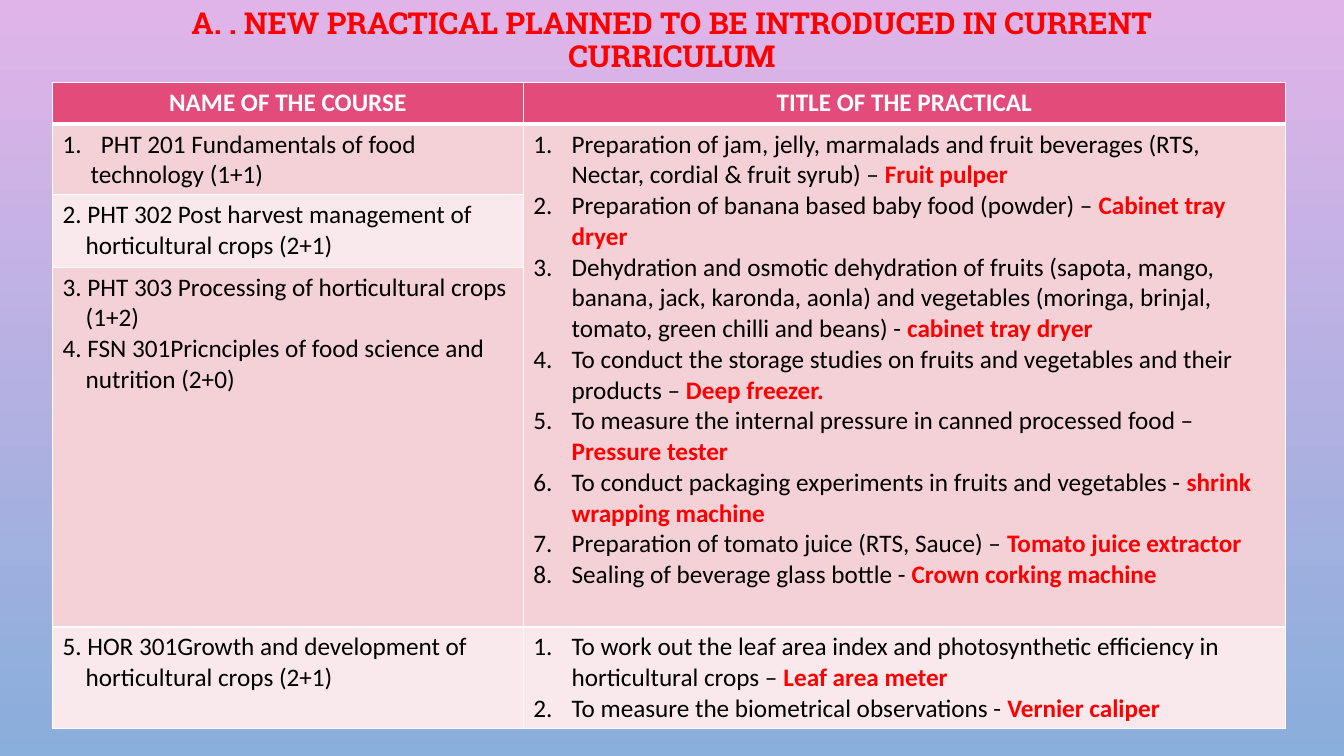
"""Builds the slide of new practicals planned for the curriculum."""
from pptx import Presentation
from pptx.dml.color import RGBColor as RGB
from pptx.enum.text import MSO_ANCHOR as Anchor, PP_ALIGN as Align
from pptx.oxml import parse_xml
from pptx.oxml.ns import nsdecls
from pptx.util import Inches, Pt

HEX = {"ink": "000000", "red": "FF0000", "white": "FFFFFF", "head": "E34B7A",
       "dark": "F4D0D7", "light": "FAE9EC", "top": "E1B4E9", "base": "89AEDB"}
TITLE = "A. . NEW PRACTICAL PLANNED TO BE INTRODUCED IN CURRENT CURRICULUM"
HEADS = ["NAME OF THE COURSE", "TITLE OF THE PRACTICAL"]
NUM, STEP, DEEP = 0.38, 0.23, 0.28
COURSES = [
    [("PHT 201 Fundamentals of food", NUM), ("technology (1+1)", DEEP)],
    [("2. PHT 302 Post harvest management of", 0),
     ("horticultural crops (2+1)", STEP)],
    [("3. PHT 303 Processing of horticultural crops", 0), ("(1+2)", STEP),
     ("4. FSN 301Pricnciples of food science and", 0),
     ("nutrition (2+0)", STEP)],
    [("5. HOR 301Growth and development of", 0),
     ("horticultural crops (2+1)", STEP)],
]
TASKS = {
    1: [("Preparation of jam, jelly, marmalads and fruit beverages "
         "(RTS, Nectar, cordial & fruit syrub) – ", "Fruit pulper"),
        ("Preparation of banana based baby food (powder) – ",
         "Cabinet tray dryer"),
        ("Dehydration and osmotic dehydration of fruits (sapota, mango, "
         "banana, jack, karonda, aonla) and vegetables (moringa, brinjal, "
         "tomato, green chilli and beans) - ", "cabinet tray dryer"),
        ("To conduct the storage studies on fruits and vegetables and their "
         "products – ", "Deep freezer."),
        ("To measure the internal pressure in canned processed food – ",
         "Pressure tester"),
        ("To conduct packaging experiments in fruits and vegetables - ",
         "shrink wrapping machine"),
        ("Preparation of tomato juice (RTS, Sauce) – ",
         "Tomato juice extractor"),
        ("Sealing of beverage glass bottle - ", "Crown corking machine")],
    4: [("To work out the leaf area index and photosynthetic efficiency in "
         "horticultural crops – ", "Leaf area meter"),
        ("To measure the biometrical observations - ", "Vernier caliper")],
}
COLS = [4.67, 7.56]
ROWS = [0.41, 0.7, 0.72, 3.57, 1.01]


def color(name):
    return RGB.from_string(HEX[name])


def add_run(para, text, ink="ink", bold=False, size=18, face="Calibri"):
    run = para.add_run()
    run.text = text
    font = run.font
    font.size, font.name, font.bold = Pt(size), face, bold
    font.color.rgb = color(ink)


def next_para(frame, first):
    return frame.paragraphs[0] if first else frame.add_paragraph()


def indent(para, left, count=False):
    props = para._p.get_or_add_pPr()
    props.set("marL", str(Inches(left)))
    props.set("indent", str(-Inches(left) if count else 0))
    if count:
        props.append(parse_xml(
            f'<a:buAutoNum {nsdecls("a")} type="arabicPeriod"/>'))


def style(cell, fill, foot=1):
    props = cell._tc.get_or_add_tcPr()
    for side, wide in zip("LRTB", (1, 1, 1, foot)):
        props.append(parse_xml(
            f'<a:ln{side} {nsdecls("a")} w="{Pt(wide)}"><a:solidFill>'
            f'<a:srgbClr val="{HEX["white"]}"/></a:solidFill></a:ln{side}>'))
    cell.fill.solid()
    cell.fill.fore_color.rgb = color(fill)


def add_title(slide):
    box = slide.shapes.add_textbox(
        Inches(1), Inches(0.07), Inches(11.33), Inches(0.68))
    frame = box.text_frame
    frame.word_wrap = True
    frame.vertical_anchor = Anchor.MIDDLE
    para = frame.paragraphs[0]
    para.alignment, para.line_spacing = Align.CENTER, 0.9
    add_run(para, TITLE, "red", True, 21.6, "Roboto Slab")


def add_grid(slide):
    grid = slide.shapes.add_table(
        len(ROWS), len(COLS), Inches(0.52), Inches(0.82),
        Inches(sum(COLS)), Inches(sum(ROWS))).table
    for col, wide in zip(grid.columns, COLS):
        col.width = Inches(wide)
    for num, (row, high) in enumerate(zip(grid.rows, ROWS)):
        row.height = Inches(high)
        fill = "dark" if num % 2 else "light"
        for cell in row.cells:
            style(cell, fill if num else "head", 1 if num else 3)
    grid.cell(1, 1).merge(grid.cell(3, 1))
    for num, text in enumerate(HEADS):
        para = grid.cell(0, num).text_frame.paragraphs[0]
        para.alignment = Align.CENTER
        add_run(para, text, "white", True)
    for num, lines in enumerate(COURSES, 1):
        frame = grid.cell(num, 0).text_frame
        for pos, (text, left) in enumerate(lines):
            para = next_para(frame, pos == 0)
            indent(para, left, left == NUM)
            add_run(para, text)
    for num, tasks in TASKS.items():
        frame = grid.cell(num, 1).text_frame
        for pos, (text, tool) in enumerate(tasks):
            para = next_para(frame, pos == 0)
            indent(para, NUM, True)
            add_run(para, text)
            add_run(para, tool, "red", True)


def main():
    deck = Presentation()
    deck.slide_width, deck.slide_height = Inches(13.33), Inches(7.5)
    slide = deck.slides.add_slide(deck.slide_layouts[6])
    back = slide.background.fill
    back.gradient()
    back.gradient_angle = 270
    for stop, name in zip(back.gradient_stops, ("top", "base")):
        stop.color.rgb = color(name)
    add_title(slide)
    add_grid(slide)
    deck.save("out.pptx")


if __name__ == "__main__":
    main()
